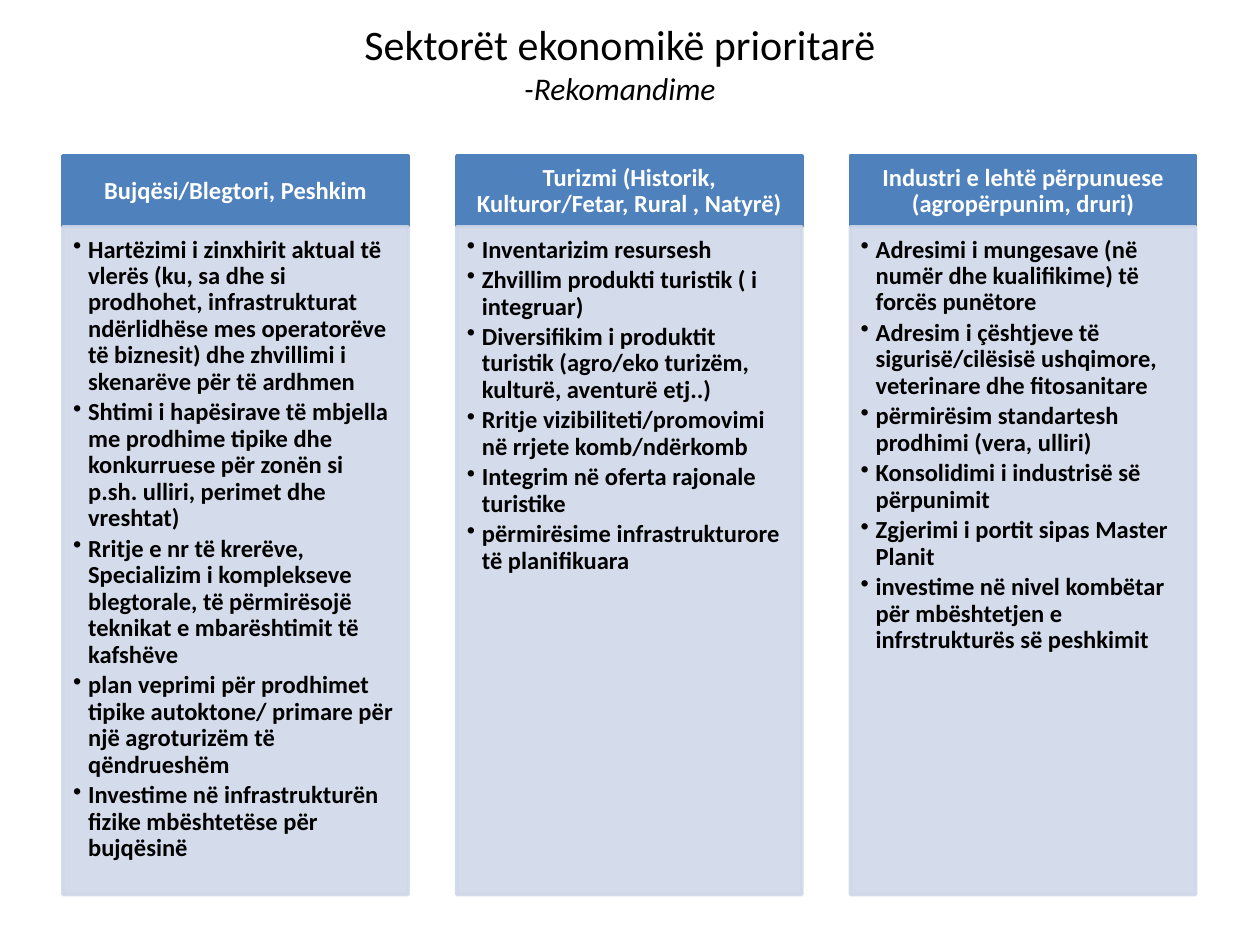
from dataclasses import dataclass

from lxml.etree import SubElement
from pptx import Presentation
from pptx.dml.color import RGBColor as RGB
from pptx.enum.shapes import MSO_SHAPE as SHAPE
from pptx.enum.text import MSO_ANCHOR as ANCHOR, PP_ALIGN as ALIGN
from pptx.oxml.ns import qn
from pptx.util import Inches, Pt


@dataclass(frozen=True)
class Theme:
    font: str = "Calibri"
    blue: RGB = RGB(0x4F, 0x81, 0xBD)
    pale: RGB = RGB(0xD0, 0xD8, 0xE8)
    white: RGB = RGB(0xFF, 0xFF, 0xFF)
    black: RGB = RGB(0, 0, 0)
    title: int = 24
    sub: int = 18
    text: int = 14


theme = Theme()


def write(par, text, size=theme.text, color=theme.black, bold=False,
          italic=False, align=ALIGN.LEFT, line=None, after=0, bullet=False):
    """Add a run of text to a paragraph, with its format."""
    run = par.add_run()
    run.text = text
    font = run.font
    font.name, font.size, font.bold, font.italic = theme.font, Pt(size), bold, italic
    font.color.rgb = color
    par.alignment, par.space_after = align, Pt(after)
    if line:
        par.line_spacing = line
    if bullet:
        par.level = 1
        props = par._p.get_or_add_pPr()
        props.set("marL", str(Inches(0.12)))
        props.set("indent", str(Inches(-0.12)))
        SubElement(props, qn("a:buChar")).set("char", "•")


def panel(slide, box, color, anchor, inset, alpha=100):
    """Add a filled rectangle and return its text frame."""
    shape = slide.shapes.add_shape(SHAPE.RECTANGLE, *map(Inches, box))
    shape.shadow.inherit = False
    shape.fill.solid()
    shape.fill.fore_color.rgb = color
    shape.line.color.rgb = color
    shape.line.width = Pt(2)
    if alpha < 100:
        for tint in shape._element.spPr.iter(qn("a:srgbClr")):
            SubElement(tint, qn("a:alpha")).set("val", str(alpha * 1000))
    frame = shape.text_frame
    frame.word_wrap, frame.vertical_anchor = True, anchor
    (frame.margin_left, frame.margin_top,
     frame.margin_right, frame.margin_bottom) = map(Inches, inset)
    return frame


deck = Presentation()
deck.slide_width, deck.slide_height = Inches(10), Inches(7.5)
slide = deck.slides.add_slide(deck.slide_layouts[5])

# Title and subtitle
title = slide.shapes.title
title.left, title.top, title.width, title.height = map(Inches, (0.42, 0, 9, 1))
title.text_frame.vertical_anchor = ANCHOR.MIDDLE
head = title.text_frame.paragraphs[0]
write(head, "Sektorët ekonomikë prioritarë", size=theme.title, align=ALIGN.CENTER)
head.add_line_break()
write(head, "-Rekomandime", size=theme.sub, italic=True, align=ALIGN.CENTER)

# Sectors and their recommendations
sectors = {
    "Bujqësi/Blegtori, Peshkim": [
        "Hartëzimi i zinxhirit aktual të vlerës (ku, sa dhe si prodhohet, "
        "infrastrukturat ndërlidhëse mes operatorëve të biznesit) dhe "
        "zhvillimi i skenarëve për të ardhmen",
        "Shtimi i hapësirave të mbjella me prodhime tipike dhe konkurruese "
        "për zonën si p.sh. ulliri, perimet dhe vreshtat)",
        "Rritje e nr të krerëve, Specializim i komplekseve blegtorale, "
        "të përmirësojë teknikat e mbarështimit të kafshëve",
        "plan veprimi për prodhimet tipike autoktone/ primare për "
        "një agroturizëm të qëndrueshëm",
        "Investime në infrastrukturën fizike mbështetëse për bujqësinë",
    ],
    "Turizmi (Historik, Kulturor/Fetar, Rural , Natyrë)": [
        "Inventarizim resursesh",
        "Zhvillim produkti turistik ( i integruar)",
        "Diversifikim i produktit turistik (agro/eko turizëm, kulturë, "
        "aventurë etj..)",
        "Rritje vizibiliteti/promovimi në rrjete komb/ndërkomb",
        "Integrim në oferta rajonale turistike",
        "përmirësime infrastrukturore të planifikuara",
    ],
    "Industri e lehtë përpunuese (agropërpunim, druri)": [
        "Adresimi i mungesave (në numër dhe kualifikime) të forcës punëtore",
        "Adresim i çështjeve të sigurisë/cilësisë ushqimore, veterinare "
        "dhe fitosanitare",
        "përmirësim standartesh prodhimi (vera, ulliri)",
        "Konsolidimi i industrisë së përpunimit",
        "Zgjerimi i portit sipas Master Planit",
        "investime në nivel kombëtar për mbështetjen e infrstrukturës "
        "së peshkimit",
    ],
}

# Three equal columns: a heading band over a list
left, top, width, step = 0.5, 1.24, 2.74, 3.125
band, depth = 0.56, 5.3
for col, (name, items) in enumerate(sectors.items()):
    x = left + col * step
    frame = panel(slide, (x, top, width, band), theme.blue, ANCHOR.MIDDLE,
                  (0.11, 0.06, 0.11, 0.06))
    write(frame.paragraphs[0], name, color=theme.white, bold=True,
          align=ALIGN.CENTER, line=0.9)

    frame = panel(slide, (x, top + band, width, depth), theme.pale, ANCHOR.TOP,
                  (0.08, 0.08, 0.11, 0.12), alpha=90)
    for row, item in enumerate(items):
        par = frame.add_paragraph() if row else frame.paragraphs[0]
        write(par, item, bold=True, line=0.9, after=2.3, bullet=True)

deck.save("out.pptx")
